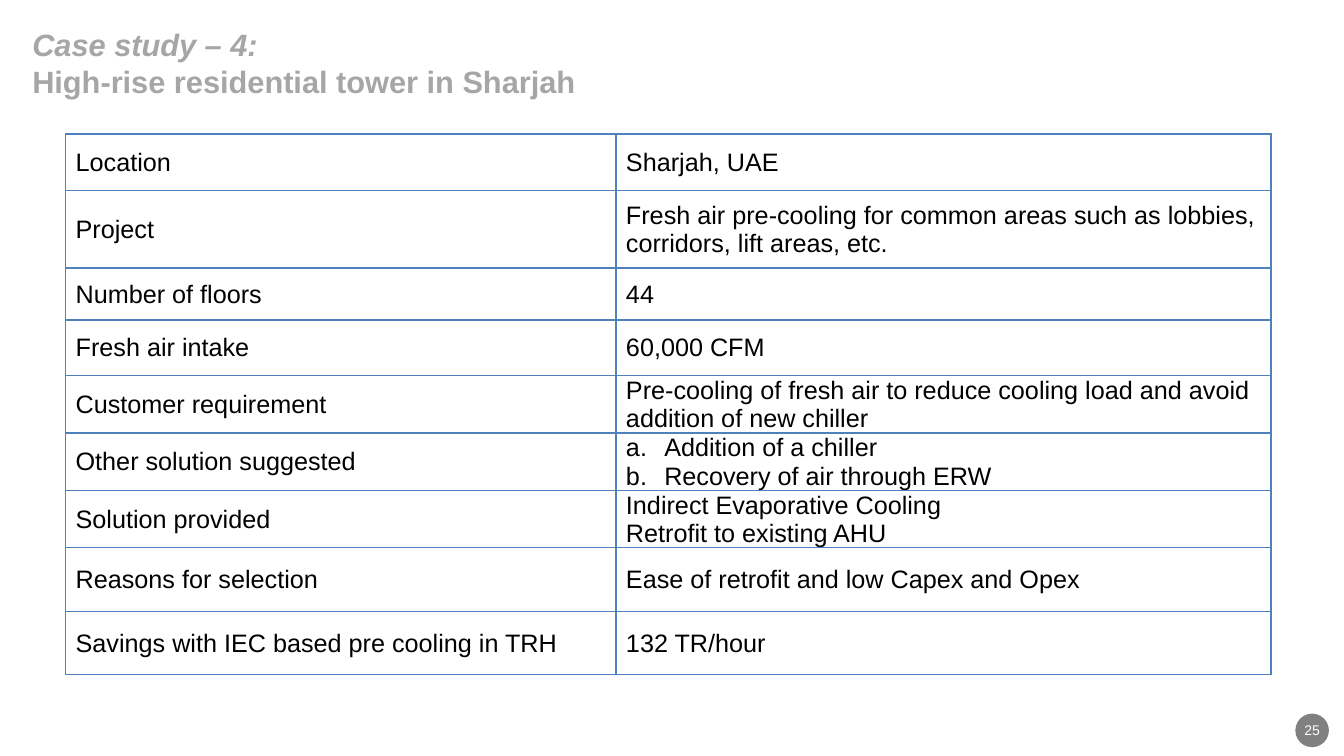
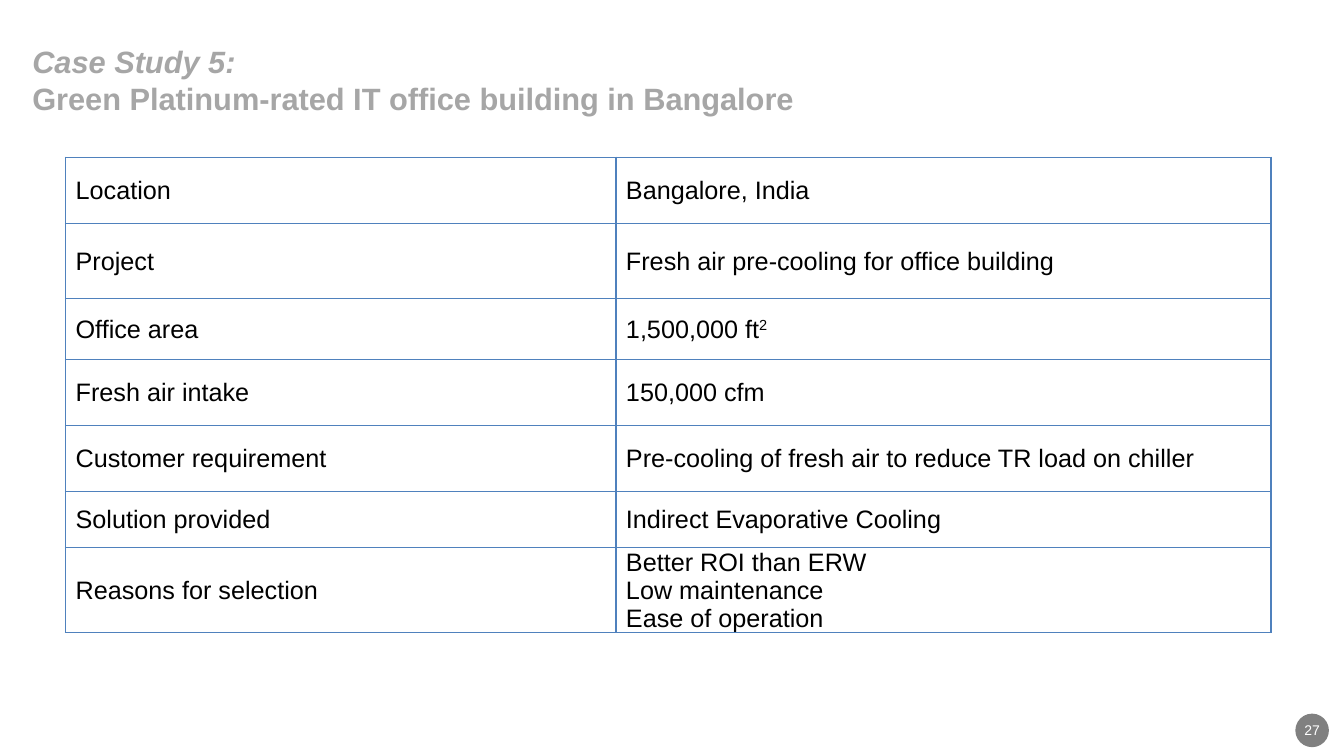
import pptx
import pptx.util
import pptx.dml.color
import pptx.enum.shapes
import pptx.enum.text
import pptx.oxml.ns
import lxml.etree

Color = pptx.dml.color.RGBColor
BLACK = Color(0x00, 0x00, 0x00)
WHITE = Color(0xFF, 0xFF, 0xFF)
SILVER = Color(0xA6, 0xA6, 0xA6)
GRAY = Color(0x80, 0x80, 0x80)
BLUE = Color(0x4F, 0x81, 0xBD)
FONT = "Arial"
WIDTH = pptx.util.Inches(13.33)
HEIGHT = pptx.util.Inches(7.5)
MIDDLE = pptx.enum.text.MSO_ANCHOR.MIDDLE
ALIGN = pptx.enum.text.PP_ALIGN

# Table columns and left edge, in percent of the slide's width
LEFT = 4.88
COLS = (40.95, 48.75)


def wide(share):
    """Percent of the slide's width."""
    return int(WIDTH * share / 100)


def high(share):
    """Percent of the slide's height."""
    return int(HEIGHT * share / 100)


def style(run, size, color, bold=False, slant=False):
    font = run.font
    font.name = FONT
    font.size = pptx.util.Pt(size)
    font.color.rgb = color
    font.bold = bold
    font.italic = slant


def add_node(parent, tag, **attrs):
    node = lxml.etree.SubElement(parent, pptx.oxml.ns.qn(tag))
    for key, value in attrs.items():
        node.set(key, str(value))
    return node


# Title: slanted first line, upright second line
def add_title(slide, lead, name, top, width):
    title = slide.shapes.title
    title.left, title.top = wide(1.65), high(top)
    title.width, title.height = wide(width), high(14.53)
    frame = title.text_frame
    frame.text = lead + "\v" + name
    frame.word_wrap = True
    frame.auto_size = pptx.enum.text.MSO_AUTO_SIZE.NONE
    frame.vertical_anchor = MIDDLE
    para = frame.paragraphs[0]
    para.alignment = ALIGN.LEFT
    for run, slant in zip(para.runs, (True, False)):
        style(run, 22, SILVER, bold=True, slant=slant)


# Round page number in the corner
def add_badge(slide, number):
    size = wide(2.5)
    badge = slide.shapes.add_shape(
        pptx.enum.shapes.MSO_SHAPE.OVAL, wide(96.38), high(94.4), size, size)
    badge.shadow.inherit = False
    badge.fill.solid()
    badge.fill.fore_color.rgb = GRAY
    badge.line.fill.background()
    frame = badge.text_frame
    frame.text = str(number)
    frame.word_wrap = False
    frame.vertical_anchor = MIDDLE
    para = frame.paragraphs[0]
    para.alignment = ALIGN.CENTER
    style(para.runs[0], 10, WHITE)


def add_edges(cell):
    props = cell._tc.get_or_add_tcPr()
    for side in ("a:lnL", "a:lnR", "a:lnT", "a:lnB"):
        line = add_node(props, side, w=pptx.util.Pt(1))
        fill = add_node(line, "a:solidFill")
        add_node(fill, "a:srgbClr", val=BLUE)


def add_letter(para):
    props = para._p.get_or_add_pPr()
    indent = pptx.util.Inches(0.38)
    props.set("marL", str(indent))
    props.set("indent", str(-indent))
    add_node(props, "a:buAutoNum", type="alphaLcPeriod")


# A tuple gives lettered lines; a caret raises what follows it
def fill_cell(cell, text):
    cell.vertical_anchor = MIDDLE
    cell.margin_left = pptx.util.Inches(0.1)
    cell.margin_right = cell.margin_top = pptx.util.Inches(0.01)
    cell.margin_bottom = 0
    add_edges(cell)
    cell.fill.background()
    listed = isinstance(text, tuple)
    cell.text_frame.text = "\n".join(text) if listed else text
    for para in cell.text_frame.paragraphs:
        if listed:
            add_letter(para)
        base, _, power = para.text.partition("^")
        para.text = base
        if power:
            run = para.add_run()
            run.text = power
            run._r.get_or_add_rPr().set("baseline", "30000")
        for run in para.runs:
            style(run, 18, BLACK)


# Two-column table; each row is (height, label, value)
def add_facts(slide, top, rows):
    total = sum(row[0] for row in rows)
    table = slide.shapes.add_table(
        len(rows), len(COLS), wide(LEFT), high(top),
        wide(sum(COLS)), high(total)).table
    table.first_row = table.horz_banding = False
    for column, share in zip(table.columns, COLS):
        column.width = wide(share)
    for line, (share, *texts) in zip(table.rows, rows):
        line.height = high(share)
        for cell, text in zip(line.cells, texts):
            fill_cell(cell, text)


def add_case(deck, number, lead, name, title_top, title_width, top, rows):
    slide = deck.slides.add_slide(deck.slide_layouts[5])
    add_badge(slide, number)
    add_title(slide, lead, name, title_top, title_width)
    add_facts(slide, top, rows)


def main():
    deck = pptx.Presentation()
    deck.slide_width, deck.slide_height = WIDTH, HEIGHT

    # Tower in Sharjah
    add_case(
        deck, 25, "Case study – 4:", "High-rise residential tower in Sharjah",
        1.07, 77.5, 17.73, [
            (7.47, "Location", "Sharjah, UAE"),
            (10.25, "Project", "Fresh air pre-cooling for common areas "
             "such as lobbies, corridors, lift areas, etc."),
            (6.88, "Number of floors", "44"),
            (7.34, "Fresh air intake", "60,000 CFM"),
            (7.6, "Customer requirement", "Pre-cooling of fresh air to reduce "
             "cooling load and avoid addition of new chiller"),
            (7.6, "Other solution suggested",
             ("Addition of a chiller", "Recovery of air through ERW")),
            (7.6, "Solution provided",
             "Indirect Evaporative Cooling\nRetrofit to existing AHU"),
            (8.4, "Reasons for selection",
             "Ease of retrofit and low Capex and Opex"),
            (8.4, "Savings with IEC based pre cooling in TRH", "132 TR/hour"),
        ])

    # Office in Bangalore
    add_case(
        deck, 27, "Case Study 5:",
        "Green Platinum-rated IT office building in Bangalore",
        3.3, 90.83, 20.8, [
            (8.8, "Location", "Bangalore, India"),
            (9.92, "Project", "Fresh air pre-cooling for office building"),
            (8.07, "Office area", "1,500,000 ft^2"),
            (8.73, "Fresh air intake", "150,000 cfm"),
            (8.73, "Customer requirement",
             "Pre-cooling of fresh air to reduce TR load on chiller"),
            (7.34, "Solution provided", "Indirect Evaporative Cooling"),
            (11.24, "Reasons for selection",
             "Better ROI than ERW\nLow maintenance\nEase of operation"),
        ])

    deck.save("out.pptx")


if __name__ == "__main__":
    main()
